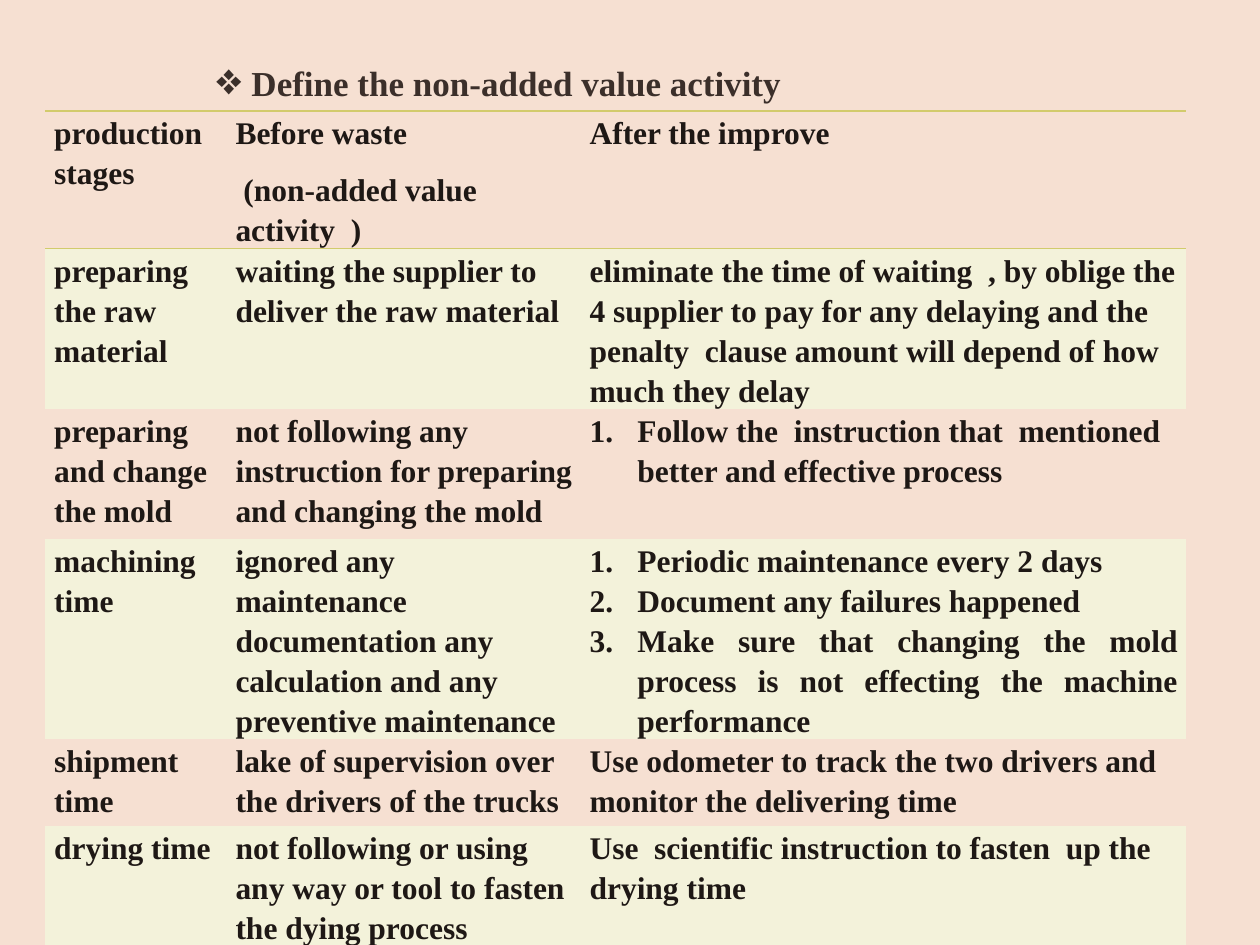
"""Build the slide that compares non-added value activities before and after improvement."""
from dataclasses import dataclass

from pptx import Presentation
from pptx.dml.color import RGBColor
from pptx.enum.text import MSO_ANCHOR, MSO_AUTO_SIZE, PP_ALIGN as Align
from pptx.oxml import parse_xml
from pptx.oxml.ns import nsdecls
from pptx.util import Inches, Pt


@dataclass(frozen=True)
class Theme:
    font: str = "Times New Roman"
    background: str = "F6E0D2"
    band: str = "F3F2DA"
    rule: str = "D2CB6C"
    title_color: str = "3B2F2A"
    body_color: str = "1E1815"
    title_size: int = 20
    body_size: int = 18
    plain_table: str = "{2D5ABB26-0587-4C30-8999-92F81FD0307C}"


@dataclass(frozen=True)
class Steps:
    items: tuple
    alignment: Align = Align.LEFT


COLUMN_WIDTHS = (1.44, 2.81, 4.8)
ROW_HEIGHTS = (0.91, 1.03, 1.03, 1.37, 0.69, 1.03)
STAGES = (
    ("production stages", ("Before waste", " (non-added value activity  )"), "After the improve"),
    (
        "preparing the raw material",
        "waiting the supplier to deliver the raw material",
        "eliminate the time of waiting  , by oblige the 4 supplier to pay for any delaying "
        "and the  penalty  clause amount will depend of how much they delay",
    ),
    (
        "preparing and change  the mold",
        "not following any instruction for preparing and changing the mold",
        Steps(("Follow the  instruction that  mentioned better and effective process",)),
    ),
    (
        "machining time",
        "ignored any maintenance documentation any calculation and any preventive maintenance",
        Steps(
            (
                "Periodic maintenance every 2 days ",
                "Document any failures happened ",
                "Make sure that changing the mold process is not effecting the machine performance ",
            ),
            Align.JUSTIFY,
        ),
    ),
    (
        "shipment time",
        "lake of supervision over the drivers of the trucks",
        "Use odometer to track the two drivers and monitor the delivering time",
    ),
    (
        "drying time",
        "not following or using any way or tool to fasten the dying process",
        "Use  scientific instruction to fasten  up the drying time",
    ),
)


class SlideBuilder:
    def __init__(self, slide, theme):
        self.slide = slide
        self.theme = theme
        fill = slide.background.fill
        fill.solid()
        fill.fore_color.rgb = RGBColor.from_string(theme.background)

    def format_runs(self, paragraph, size, color):
        for run in paragraph.runs:
            run.font.name = self.theme.font
            run.font.size = Pt(size)
            run.font.bold = True
            run.font.color.rgb = RGBColor.from_string(color)

    def add_bullet(self, paragraph, element):
        properties = paragraph._p.get_or_add_pPr()
        properties.append(parse_xml(f'<a:buFont {nsdecls("a")} typeface="{self.theme.font}"/>'))
        properties.append(parse_xml(f'<a:{element} {nsdecls("a")}/>'))
        return properties

    def add_title(self, text, left, top, width, height):
        box = self.slide.shapes.add_textbox(Inches(left), Inches(top), Inches(width), Inches(height))
        frame = box.text_frame
        frame.text = text
        frame.word_wrap = False
        frame.auto_size = MSO_AUTO_SIZE.SHAPE_TO_FIT_TEXT
        paragraph = frame.paragraphs[0]
        self.add_bullet(paragraph, 'buChar char="❖"')
        paragraph.alignment = Align.JUSTIFY
        self.format_runs(paragraph, self.theme.title_size, self.theme.title_color)

    def add_borders(self, cell, ruled_sides):
        properties = cell._tc.get_or_add_tcPr()
        solid = f'<a:solidFill><a:srgbClr val="{self.theme.rule}"/></a:solidFill>'
        for side in "LRTB":
            line_fill = solid if side in ruled_sides else "<a:noFill/>"
            properties.append(parse_xml(
                f'<a:ln{side} {nsdecls("a")} w="{Pt(1)}">{line_fill}</a:ln{side}>'
            ))

    def fill_cell(self, cell, content):
        numbered = isinstance(content, Steps)
        items = content.items if numbered else (content,) if isinstance(content, str) else content
        frame = cell.text_frame
        frame.text = "\n".join(items)
        cell.margin_left = Inches(0.07)
        cell.margin_right = Inches(0.06)
        cell.margin_top = cell.margin_bottom = 0
        cell.vertical_anchor = MSO_ANCHOR.TOP
        for paragraph in frame.paragraphs:
            if numbered:
                properties = self.add_bullet(paragraph, 'buAutoNum type="arabicPeriod"')
                properties.set("marL", str(Inches(0.38)))
                properties.set("indent", str(-Inches(0.38)))
                paragraph.alignment = content.alignment
            paragraph.line_spacing = 1.15
            paragraph.space_after = Pt(0 if numbered else 10)
            self.format_runs(paragraph, self.theme.body_size, self.theme.body_color)
        frame.paragraphs[-1].space_after = Pt(10)

    def add_stage_table(self, rows, left, top):
        frame = self.slide.shapes.add_table(
            len(rows), len(COLUMN_WIDTHS), Inches(left), Inches(top),
            Inches(sum(COLUMN_WIDTHS)), Inches(sum(ROW_HEIGHTS)),
        )
        table = frame.table
        table._tbl.tblPr[0].text = self.theme.plain_table
        table.horz_banding = False
        for column, width in zip(table.columns, COLUMN_WIDTHS):
            column.width = Inches(width)
        ruled_sides = {0: "TB", 1: "T", len(rows) - 1: "B"}
        for index, (row, height) in enumerate(zip(table.rows, ROW_HEIGHTS)):
            row.height = Inches(height)
            for cell, content in zip(row.cells, rows[index]):
                self.fill_cell(cell, content)
                self.add_borders(cell, ruled_sides.get(index, ""))
                if index % 2:
                    cell.fill.solid()
                    cell.fill.fore_color.rgb = RGBColor.from_string(self.theme.band)
                else:
                    cell.fill.background()


def main():
    presentation = Presentation()
    presentation.slide_width = Inches(10)
    presentation.slide_height = Inches(7.5)
    slide = presentation.slides.add_slide(presentation.slide_layouts[6])
    builder = SlideBuilder(slide, Theme())
    builder.add_stage_table(STAGES, 0.36, 0.88)
    builder.add_title(" Define the non-added value activity", 1.61, 0.44, 4.72, 0.44)
    presentation.save("out.pptx")


if __name__ == "__main__":
    main()
